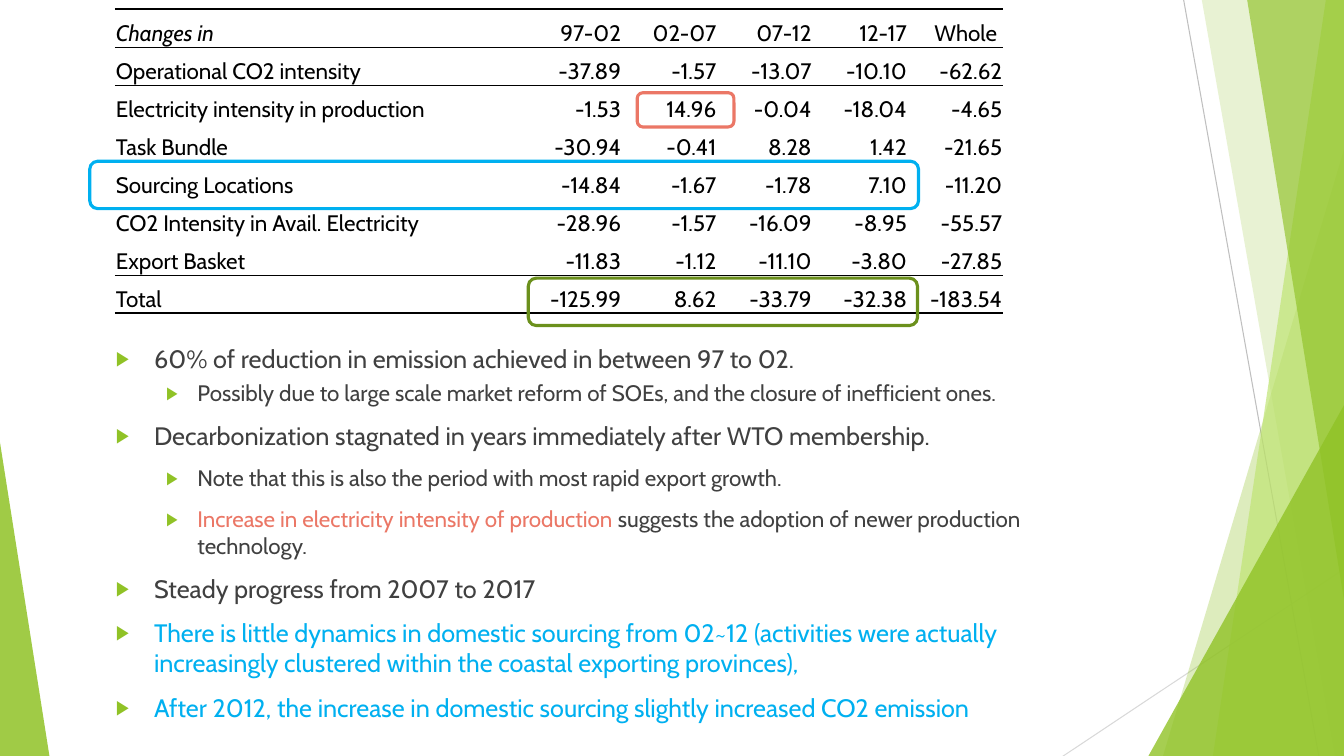
from lxml import etree
from pptx import Presentation
from pptx.dml.color import RGBColor
from pptx.enum.shapes import MSO_CONNECTOR, MSO_SHAPE as SHAPE
from pptx.enum.text import MSO_ANCHOR, PP_ALIGN
from pptx.oxml.ns import qn
from pptx.util import Inches, Pt

FONT = "Cabin"
GREEN, LIME, OLIVE = "90C226", "C0E474", "6B901C"
RED, BLUE, GREY, BLACK = "EB7766", "00B0F0", "404040", "000000"
NO_GRID_STYLE = "{2D5ABB26-0587-4C30-8999-92F81FD0307C}"

TABLE = [
    ["Changes in", "97-02", "02-07", "07-12", "12-17", "Whole "],
    ["Operational CO2 intensity", "-37.89", "-1.57", "-13.07", "-10.10", "-62.62"],
    ["Electricity intensity in production", "-1.53", "14.96", "-0.04", "-18.04", "-4.65"],
    ["Task Bundle", "-30.94", "-0.41", "8.28", "1.42", "-21.65"],
    ["Sourcing Locations", "-14.84", "-1.67", "-1.78", "7.10", "-11.20"],
    ["CO2 Intensity in Avail. Electricity", "-28.96", "-1.57", "-16.09", "-8.95", "-55.57"],
    ["Export Basket", "-11.83", "-1.12", "-11.10", "-3.80", "-27.85"],
    ["Total", "-125.99", "8.62", "-33.79", "-32.38", "-183.54"],
]
# Widths in points of the rules above and below a row
RULES = {0: (2, 0.5), 1: (0.5, None), 6: (None, 0.5), 7: (0.5, 2)}

# Level, space before, runs of (text, colour)
BULLETS = [
    (0, 10, [("60% of reduction in emission achieved in between 97 to 02.", GREY)]),
    (1, 4, [("Possibly due to large scale market reform of SOEs, and the closure "
             "of inefficient ones.", GREY)]),
    (0, 10, [("Decarbonization stagnated in years immediately after WTO membership.", GREY)]),
    (1, 10, [("Note that this is also the period with most rapid export growth.", GREY)]),
    (1, 10, [("Increase in electricity intensity of production ", RED),
             ("suggests the adoption of newer production technology.", GREY)]),
    (0, 10, [("Steady progress from 2007 to 2017", GREY)]),
    (0, 10, [("There is little dynamics in domestic sourcing from 02~12 (activities were "
              "actually increasingly clustered within the coastal exporting provinces),", BLUE)]),
    (0, 10, [("After 2012, the increase in domestic sourcing slightly increased "
              "CO2 emission", BLUE)]),
]
LEVELS = [(18, 0.38, 0.38), (16, 0.81, 0.31)]  # size, margin, hanging indent


def rgb(color):
    return RGBColor.from_string(color)


def child(parent, tag, **attrs):
    el = etree.SubElement(parent, qn(tag))
    for name, value in attrs.items():
        el.set(name, str(value))
    return el


def add_run(p, text, size, color, italic=False):
    r = p.add_run()
    r.text = text
    r.font.name, r.font.size, r.font.italic = FONT, Pt(size), italic
    r.font.color.rgb = rgb(color)


def tint(sp, color, opacity):
    """Fill a shape with a translucent colour and no outline."""
    sp.shadow.inherit = False
    sp.fill.solid()
    sp.fill.fore_color.rgb = rgb(color)
    sp.line.fill.background()
    clr = sp.fill._xPr.find(qn("a:solidFill"))[0]
    child(clr, "a:alpha", val=opacity * 1000)


def add_line(slide, x1, y1, x2, y2, color):
    ln = slide.shapes.add_connector(
        MSO_CONNECTOR.STRAIGHT, *(Inches(v) for v in (x1, y1, x2, y2)))
    ln.line.color.rgb = rgb(color)
    ln.line.width = Pt(0.75)
    child(ln._element.spPr, "a:effectLst")


def add_facet(slide, points, color, opacity):
    start, *rest = [(Inches(x), Inches(y)) for x, y in points]
    fb = slide.shapes.build_freeform(*start)
    fb.add_line_segments(rest, close=True)
    tint(fb.convert_to_shape(), color, opacity)


def add_triangle(slide, x, y, w, h, apex, opacity):
    sp = slide.shapes.add_shape(SHAPE.ISOSCELES_TRIANGLE,
                                Inches(x), Inches(y), Inches(w), Inches(h))
    sp.adjustments[0] = apex
    tint(sp, GREEN, opacity)


def add_backdrop(slide, w, h):
    """Green facets along both sides of a slide of the given size."""
    add_line(slide, 11.74, 0, 13.08, h, "BFBFBF")
    add_line(slide, 15.68, 4.08, 10.47, 7.55, "D9D9D9")
    add_facet(slide, [(13.76, 0.04), (14.81, 0.04), (14.81, 7.55), (11.52, 7.55)], GREEN, 30)
    add_facet(slide, [(11.92, 0), (14.75, 0), (14.75, h), (13.24, h)], GREEN, 20)
    add_facet(slide, [(13.15, 0), (13.44, 0), (13.44, h), (12.03, h)], LIME, 70)
    add_facet(slide, [(12.37, 0), (13.74, 0), (13.74, h), (13.58, h)], GREEN, 65)
    add_triangle(slide, w - 1.94, h - 3.57, 1.99, 3.57, 1, 80)
    add_triangle(slide, 0, h - 3.11, 0.49, 3.11, 0, 85)


def add_bullets(slide, x, y, w, h):
    tf = slide.shapes.add_textbox(Inches(x), Inches(y), Inches(w), Inches(h)).text_frame
    tf.word_wrap = True
    for i, (level, before, runs) in enumerate(BULLETS):
        p = tf.add_paragraph() if i else tf.paragraphs[0]
        size, margin, hang = LEVELS[level]
        p.level, p.space_before = level, Pt(before)
        pPr = p._p.get_or_add_pPr()
        pPr.set("marL", str(Inches(margin)))
        pPr.set("indent", str(-Inches(hang)))
        child(child(pPr, "a:buClr"), "a:srgbClr", val=GREEN)
        child(pPr, "a:buSzPct", val=80000)
        child(pPr, "a:buFont", typeface="Wingdings 3")
        pPr[-1].set("typeface", "Arial")
        child(pPr, "a:buChar", char="▶")
        for text, color in runs:
            add_run(p, text, size, color)


def add_rules(cell, widths):
    """Draw black rules above and below a cell."""
    tcPr = cell._tc.get_or_add_tcPr()
    at = 0
    for tag, width in zip(("a:lnT", "a:lnB"), widths):
        if width:
            ln = child(tcPr, tag, w=Pt(width))
            child(child(ln, "a:solidFill"), "a:srgbClr", val=BLACK)
            tcPr.insert(at, ln)  # borders precede the fill
            at += 1


def add_changes_table(slide, x, y, w, h):
    gf = slide.shapes.add_table(len(TABLE), len(TABLE[0]),
                                Inches(x), Inches(y), Inches(w), Inches(h))
    table = gf.table
    table.first_row = table.horz_banding = False
    table._tbl.tblPr.find(qn("a:tableStyleId")).text = NO_GRID_STYLE
    number_w = 0.945
    for j, col in enumerate(table.columns):
        col.width = Inches(number_w if j else w - 5 * number_w)
    for i, row in enumerate(TABLE):
        table.rows[i].height = Inches(h / len(TABLE))
        for j, text in enumerate(row):
            cell = table.cell(i, j)
            cell.fill.background()
            cell.margin_left = cell.margin_right = cell.margin_top = Inches(0.01)
            cell.margin_bottom = 0
            cell.vertical_anchor = MSO_ANCHOR.BOTTOM
            p = cell.text_frame.paragraphs[0]
            p.alignment = PP_ALIGN.RIGHT if j else PP_ALIGN.LEFT
            add_run(p, text, 16, BLACK, italic=(i == j == 0))
            add_rules(cell, RULES.get(i, (None, None)))


def add_highlight(slide, x, y, w, h, color):
    sp = slide.shapes.add_shape(SHAPE.ROUNDED_RECTANGLE,
                                Inches(x), Inches(y), Inches(w), Inches(h))
    sp.shadow.inherit = False
    sp.fill.background()
    sp.line.color.rgb = rgb(color)
    sp.line.width = Pt(2.25)


def main():
    prs = Presentation()
    prs.slide_width, prs.slide_height = Inches(13.33), Inches(7.5)
    slide = prs.slides.add_slide(prs.slide_layouts[6])
    add_backdrop(slide, 13.33, 7.5)
    add_bullets(slide, 1.05, 3.36, 9.96, 4.05)
    add_changes_table(slide, 1.14, 0.09, 8.81, 3.02)
    add_highlight(slide, 5.24, 2.76, 3.86, 0.47, OLIVE)
    add_highlight(slide, 6.32, 0.92, 0.96, 0.34, RED)
    add_highlight(slide, 0.89, 1.6, 8.22, 0.47, BLUE)
    prs.save("out.pptx")


if __name__ == "__main__":
    main()
